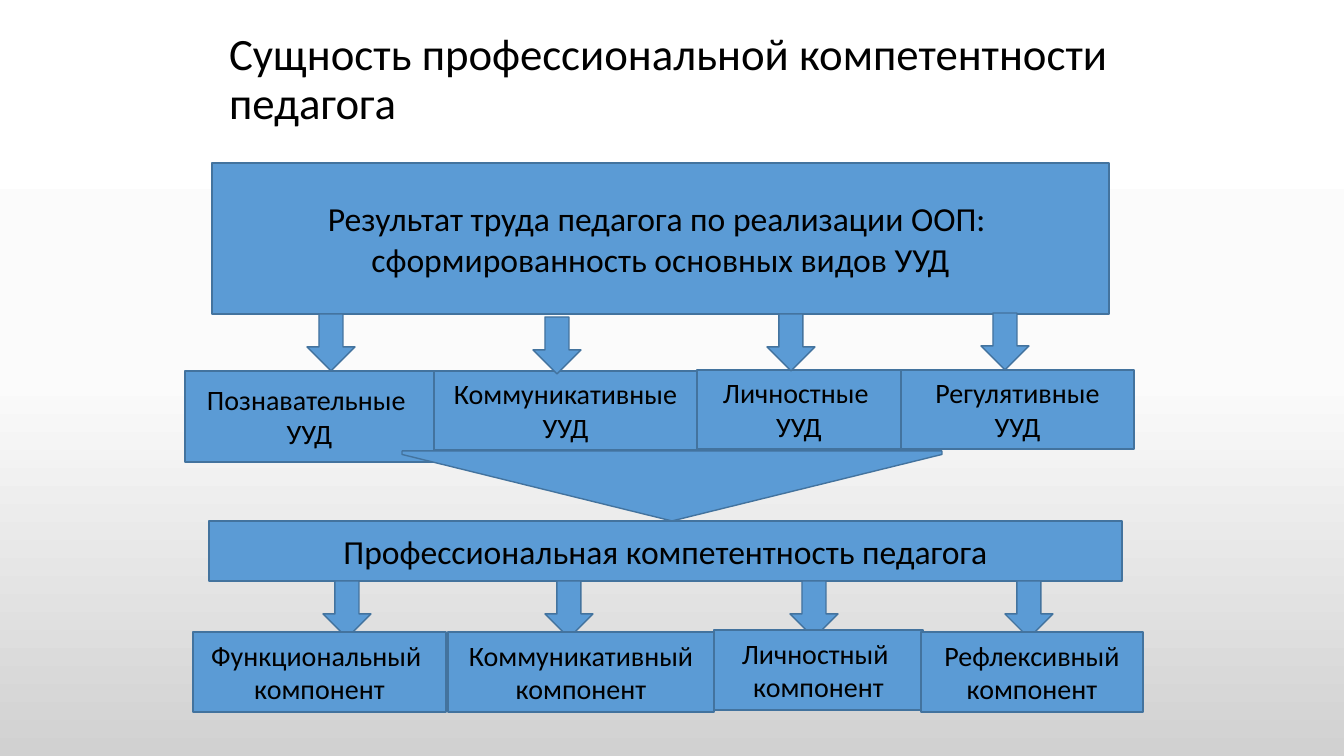
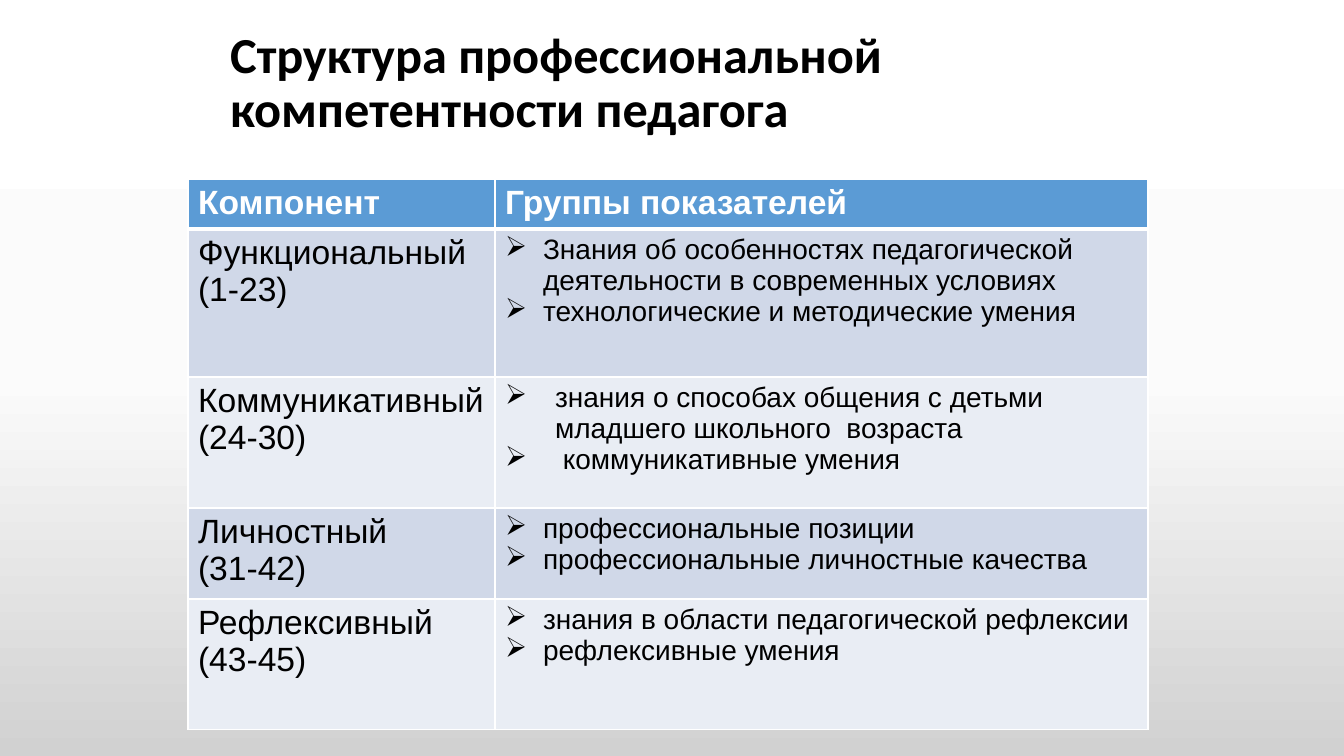
from copy import deepcopy
from dataclasses import dataclass
from itertools import accumulate

from lxml.etree import SubElement
from pptx import Presentation
from pptx.dml.color import RGBColor
from pptx.enum.shapes import MSO_SHAPE
from pptx.enum.text import MSO_ANCHOR, MSO_AUTO_SIZE, PP_ALIGN
from pptx.oxml.ns import qn
from pptx.util import Emu, Pt

SLIDE_WIDTH, SLIDE_HEIGHT = 1344, 756
EMU_PER_PX = 12192000 / SLIDE_WIDTH


@dataclass(frozen=True)
class Theme:
    blue: str = "5B9BD5"
    outline: str = "43739E"
    black: str = "000000"
    white: str = "FFFFFF"
    dark_band: str = "D0D8E8"
    light_band: str = "E9EDF4"
    background: tuple = ((0, "FFFFFF"), (0.5, "FBFBFB"), (1, "D1D1D1"))
    diagram_font: str = "Calibri"
    table_font: str = "Arial"
    title_size: int = 32
    large_title_size: int = 36
    heading_size: int = 24
    body_size: int = 20


THEME = Theme()


@dataclass(frozen=True)
class Box:
    left: int
    top: int
    width: int
    height: int

    def emu(self):
        return [px(side) for side in (self.left, self.top, self.width, self.height)]


@dataclass(frozen=True)
class Branch:
    """A small box of a row and its arrow, both measured from the row's corner."""
    lines: tuple
    left: int
    width: int
    arrow_left: int
    arrow_top: int
    drop: int = 0
    extra_height: int = 0


UPPER_BRANCHES = (
    Branch(("Познавательные ", "УУД"), 0, 249, 122, -56, 1, 12),
    Branch(("Коммуникативные УУД",), 249, 263, 348, -53, 1),
    Branch(("Личностные ", "УУД"), 512, 204, 582, -56),
    Branch(("Регулятивные УУД",), 716, 233, 796, -57),
)
LOWER_BRANCHES = (
    Branch(("Функциональный ", "компонент"), 0, 253, 130, -49, 2),
    Branch(("Коммуникативный компонент",), 255, 266, 352, -49, 2),
    Branch(("Личностный ", "компонент"), 521, 209, 597, -49),
    Branch(("Рефлексивный компонент",), 728, 222, 812, -49, 2),
)

TABLE_HEADER = ("Компонент", "Группы показателей")
TABLE_ROWS = (
    (("Функциональный", "(1-23)"),
     ("Знания об особенностях педагогической деятельности в современных условиях",
      "технологические и методические умения"), 38),
    (("Коммуникативный", "(24-30)"),
     ("знания о способах общения с детьми младшего школьного  возраста",
      " коммуникативные умения"), 50),
    (("Личностный", "(31-42)"),
     ("профессиональные позиции", "профессиональные личностные качества"), 38),
    (("Рефлексивный", "(43-45)"),
     ("знания в области педагогической рефлексии", "рефлексивные умения"), 38),
)
COLUMN_WIDTHS = (307, 653)
ROW_HEIGHTS = (50, 148, 131, 91, 131)


def px(length):
    return Emu(round(length * EMU_PER_PX))


def color(value):
    return RGBColor.from_string(value)


def add_bullet(paragraph, indent):
    properties = paragraph._p.get_or_add_pPr()
    properties.set("marL", str(px(indent)))
    properties.set("indent", str(-px(indent)))
    SubElement(properties, qn("a:buChar"), char="➢")


def write_text(frame, lines, *, size, font=THEME.diagram_font, fill=THEME.black,
               bold=False, align=PP_ALIGN.LEFT, spacing=None, bullet_indent=0):
    frame.word_wrap = True
    for index, line in enumerate(lines):
        paragraph = frame.add_paragraph() if index else frame.paragraphs[0]
        paragraph.alignment = align
        if spacing:
            paragraph.line_spacing = spacing
        if bullet_indent:
            add_bullet(paragraph, bullet_indent)
        run = paragraph.add_run()
        run.text = line
        run.font.name = font
        run.font.size = Pt(size)
        run.font.bold = bold
        run.font.color.rgb = color(fill)


def set_background(master):
    fill = master.background.fill
    fill.gradient()
    fill.gradient_angle = 270
    stop_list = master.element.find(".//" + qn("a:gsLst"))
    stop_list.append(deepcopy(stop_list[-1]))
    for stop, (position, value) in zip(fill.gradient_stops, THEME.background):
        stop.position = position
        stop.color.rgb = color(value)


def add_titled_slide(presentation, title, box, size, bold=False):
    slide = presentation.slides.add_slide(presentation.slide_layouts[5])
    placeholder = slide.shapes.title
    placeholder.left, placeholder.top, placeholder.width, placeholder.height = box.emu()
    frame = placeholder.text_frame
    frame.auto_size = MSO_AUTO_SIZE.NONE
    frame.vertical_anchor = MSO_ANCHOR.MIDDLE
    write_text(frame, [title], size=size, bold=bold, spacing=0.9)
    return slide


def add_block(slide, box, lines=(), size=THEME.body_size, kind=MSO_SHAPE.RECTANGLE):
    shape = slide.shapes.add_shape(kind, *box.emu())
    shape.shadow.inherit = False
    shape.fill.solid()
    shape.fill.fore_color.rgb = color(THEME.blue)
    shape.line.color.rgb = color(THEME.outline)
    shape.line.width = Pt(1)
    if lines:
        shape.text_frame.vertical_anchor = MSO_ANCHOR.MIDDLE
        write_text(shape.text_frame, lines, size=size, align=PP_ALIGN.CENTER)
    return shape


def add_branch_arrows(slide, box, branches):
    for branch in branches:
        arrow_box = Box(box.left + branch.arrow_left, box.top + branch.arrow_top, 48, 57)
        add_block(slide, arrow_box, kind=MSO_SHAPE.DOWN_ARROW)


def add_branch_boxes(slide, box, branches):
    for branch in branches:
        branch_box = Box(box.left + branch.left, box.top + branch.drop,
                         branch.width, box.height + branch.extra_height)
        add_block(slide, branch_box, branch.lines)


def add_result_section(slide, box):
    """The result of teaching, split into four kinds of skill."""
    add_block(slide, Box(box.left + 27, box.top, 897, 151),
              ("Результат труда педагога по реализации ООП: ",
               "сформированность основных видов УУД"), THEME.heading_size)
    row = Box(box.left, box.top + 207, box.width, 79)
    add_branch_boxes(slide, row, UPPER_BRANCHES)
    add_branch_arrows(slide, row, UPPER_BRANCHES)


def add_competence_section(slide, box):
    """The wide arrow, the competence it leads to, and its four components."""
    add_block(slide, Box(box.left + 16, box.top + 70, 913, 60),
              ("Профессиональная компетентность педагога",), THEME.heading_size)
    wide_arrow = add_block(slide, Box(box.left + 209, box.top, 540, 70),
                           kind=MSO_SHAPE.DOWN_ARROW)
    wide_arrow.adjustments[0] = 1
    wide_arrow.adjustments[1] = 0.95
    row = Box(box.left, box.top + 179, box.width, 80)
    add_branch_arrows(slide, row, LOWER_BRANCHES)
    add_branch_boxes(slide, row, LOWER_BRANCHES)


def set_borders(cell, top, bottom):
    """White cell borders; the widths of the horizontal ones are in points."""
    properties = cell._tc.get_or_add_tcPr()
    for index, (side, width) in enumerate((("L", 1), ("R", 1), ("T", top), ("B", bottom))):
        line = SubElement(properties, qn("a:ln" + side), w=str(Pt(width)))
        fill = SubElement(line, qn("a:solidFill"))
        SubElement(fill, qn("a:srgbClr"), val=THEME.white)
        properties.insert(index, line)


def fill_row(table, index, cells, fill):
    """Each cell is a pair: its lines and the format of their text."""
    for column, (lines, text_format) in enumerate(cells):
        cell = table.cell(index, column)
        cell.fill.solid()
        cell.fill.fore_color.rgb = color(fill)
        set_borders(cell, top=3 if index == 1 else 1, bottom=3 if index == 0 else 1)
        write_text(cell.text_frame, lines, font=THEME.table_font, **text_format)


def add_component_table(slide, box):
    table = slide.shapes.add_table(len(ROW_HEIGHTS), len(COLUMN_WIDTHS), *box.emu()).table
    table.horz_banding = False
    for column, width in zip(table.columns, COLUMN_WIDTHS):
        column.width = px(width)
    for row, height in zip(table.rows, ROW_HEIGHTS):
        row.height = px(height)

    header_format = dict(size=THEME.heading_size, fill=THEME.white, bold=True)
    fill_row(table, 0, [((heading,), header_format) for heading in TABLE_HEADER], THEME.blue)
    for index, (component, indicators, indent) in enumerate(TABLE_ROWS, start=1):
        cells = ((component, dict(size=THEME.heading_size)),
                 (indicators, dict(size=THEME.body_size, bullet_indent=indent)))
        fill_row(table, index, cells, THEME.dark_band if index % 2 else THEME.light_band)


def build_essence_slide(presentation):
    slide = add_titled_slide(presentation, "Сущность профессиональной компетентности педагога",
                             Box(219, 21, 907, 119), THEME.title_size)
    add_result_section(slide, Box(185, 163, 949, 299))
    add_competence_section(slide, Box(193, 451, 950, 261))


def build_structure_slide(presentation):
    slide = add_titled_slide(presentation, "Структура профессиональной компетентности педагога",
                             Box(220, 21, 907, 126), THEME.large_title_size, bold=True)
    add_component_table(slide, Box(188, 179, sum(COLUMN_WIDTHS), sum(ROW_HEIGHTS)))


def main():
    presentation = Presentation()
    presentation.slide_width = px(SLIDE_WIDTH)
    presentation.slide_height = px(SLIDE_HEIGHT)
    set_background(presentation.slide_master)
    build_essence_slide(presentation)
    build_structure_slide(presentation)
    presentation.save("out.pptx")


if __name__ == "__main__":
    main()
